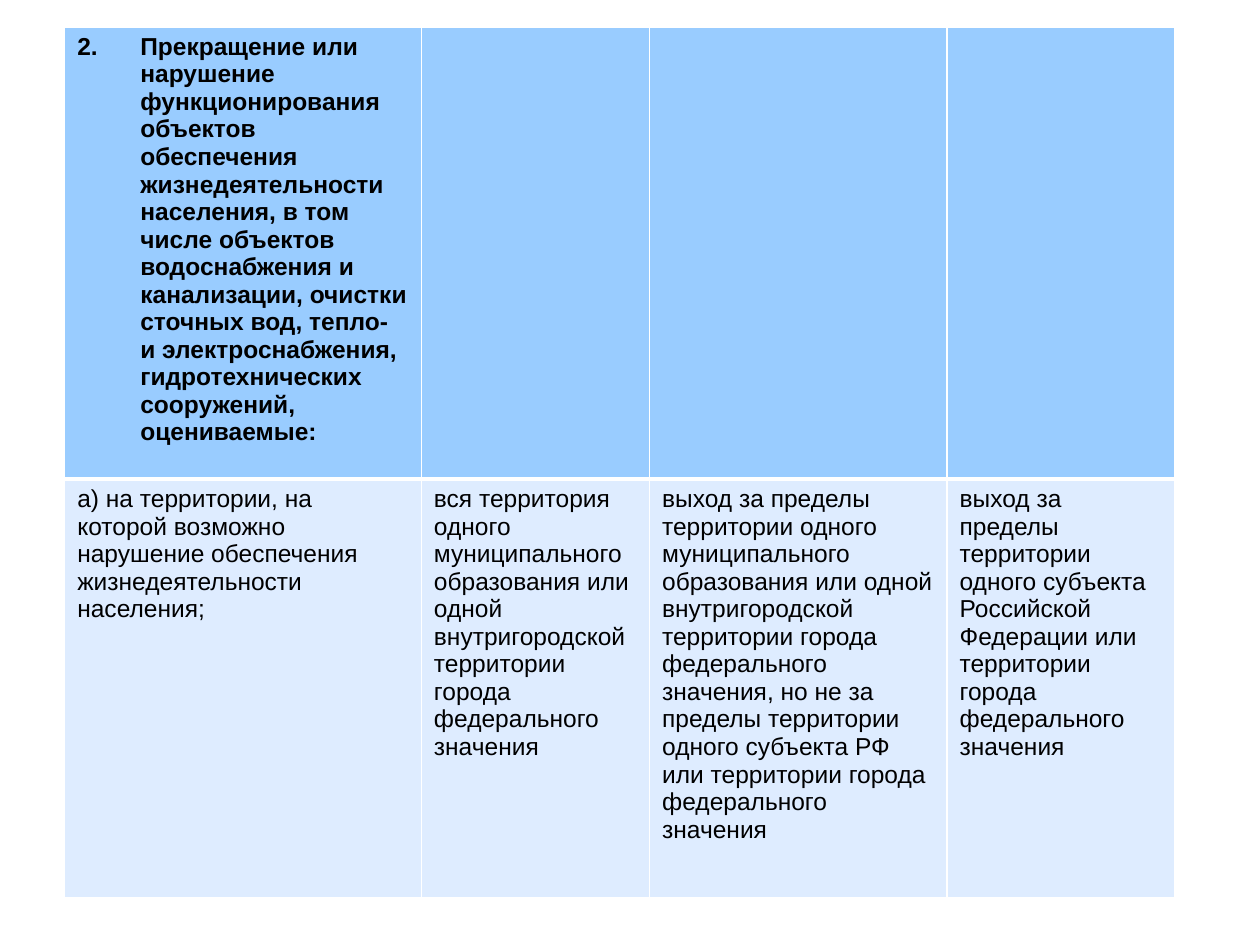
from lxml import etree
from pptx import Presentation
from pptx.dml.color import RGBColor
from pptx.oxml.ns import qn
from pptx.util import Pt


def tint(code):
    return RGBColor.from_string(code)


class Deck:
    font, size, ink, rule = "Arial", 14, "000000", "FFFFFF"

    def __init__(self, wide, high):
        self.prs = Presentation()
        self.prs.slide_width, self.prs.slide_height = Pt(wide), Pt(high)
        self.slide = self.prs.slides.add_slide(self.prs.slide_layouts[6])

    def table(self, left, top, cols, rows):
        frame = self.slide.shapes.add_table(
            len(rows), len(cols), Pt(left), Pt(top), Pt(sum(cols)), Pt(sum(rows)))
        grid = frame.table
        for col, wide in zip(grid.columns, cols):
            col.width = Pt(wide)
        for row, high in zip(grid.rows, rows):
            row.height = Pt(high)
        return grid

    def edge(self, cell, side, width):
        line = etree.SubElement(cell._tc.get_or_add_tcPr(), qn(f"a:ln{side}"),
                                w=str(Pt(width)))
        fill = etree.SubElement(line, qn("a:solidFill"))
        etree.SubElement(fill, qn("a:srgbClr"), val=self.rule)

    def cell(self, cell, words, fill, bold, edges):
        # Borders come before the fill in the cell's properties
        for side, width in zip("LRTB", edges):
            self.edge(cell, side, width)
        cell.fill.solid()
        cell.fill.fore_color.rgb = tint(fill)
        cell.text = words
        para = cell.text_frame.paragraphs[0]
        font = para.font
        font.name, font.size, font.bold = self.font, Pt(self.size), bold
        font.color.rgb = tint(self.ink)
        return para

    def hang(self, para, depth):
        props = para._p.get_or_add_pPr()
        props.set("marL", str(Pt(depth)))
        props.set("indent", str(-Pt(depth)))


HEAD = ("2.\tПрекращение или нарушение функционирования объектов обеспечения "
        "жизнедеятельности населения, в том числе объектов водоснабжения и "
        "канализации, очистки сточных вод, тепло- и электроснабжения, "
        "гидротехнических сооружений, оцениваемые:")
BODY = [
    "а) на территории, на которой возможно нарушение обеспечения "
    "жизнедеятельности населения;",
    "вся территория одного муниципального образования или одной "
    "внутригородской территории города федерального значения",
    "выход за пределы территории одного муниципального образования или одной "
    "внутригородской территории города федерального значения, но не за пределы "
    "территории одного субъекта РФ или территории города федерального значения",
    "выход за пределы территории одного субъекта Российской Федерации или "
    "территории города федерального значения",
]


def main():
    deck = Deck(720, 540)
    grid = deck.table(37, 15.3, [203.8, 130.4, 170, 130.4], [258.5, 239])

    # Heading row: numbered title in the first cell only
    for col in range(len(BODY)):
        para = deck.cell(grid.cell(0, col), "" if col else HEAD,
                         "99CCFF", True, (1, 1, 1, 3))
        if col == 0:
            deck.hang(para, 36)

    # Criteria row
    for col, words in enumerate(BODY):
        deck.cell(grid.cell(1, col), words, "DEECFF", False, (1, 1, 3, 1))

    deck.prs.save("out.pptx")


if __name__ == "__main__":
    main()
